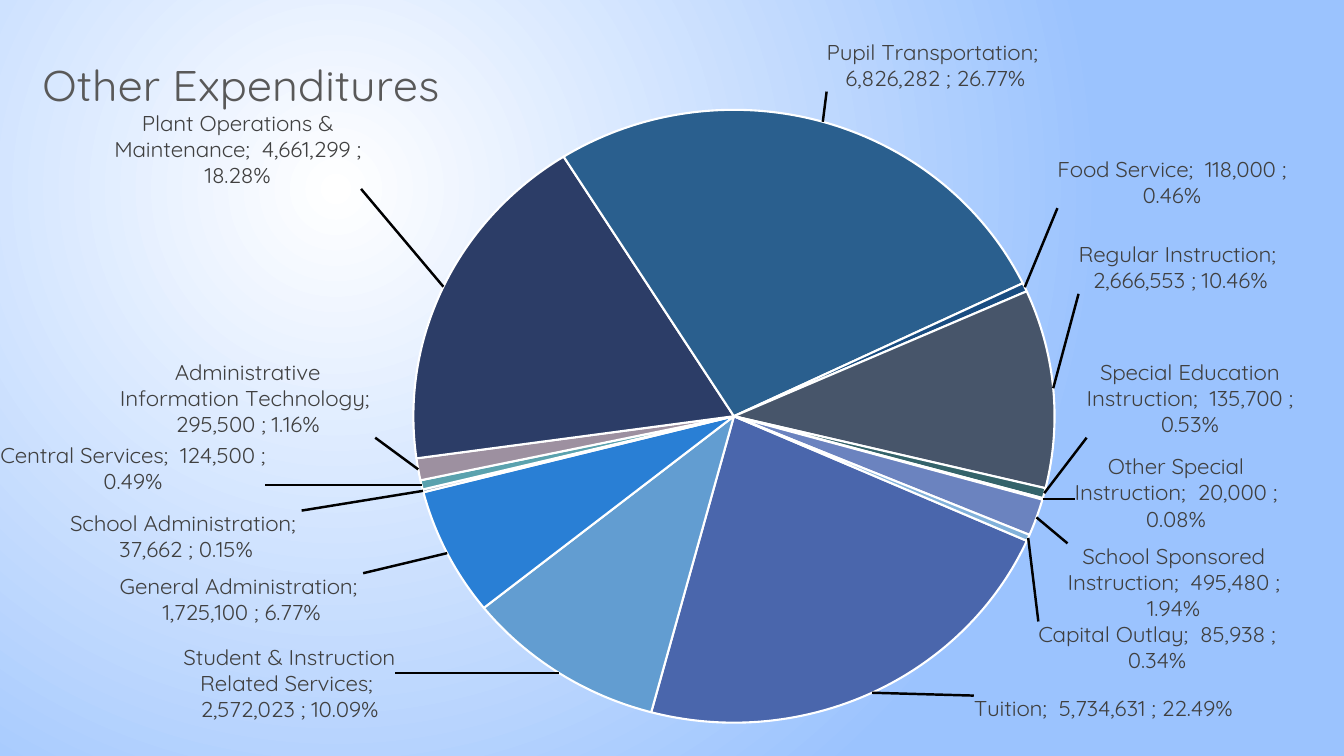
from math import cos, radians, sin

from lxml import etree
from pptx import Presentation
from pptx import util as u
from pptx.chart import data as cd
from pptx.dml import color as dc
from pptx.enum import chart as ce
from pptx.oxml import ns, parse_xml


class Theme:
    text = "404040"
    title = "595959"
    line = "000000"
    edge = "FFFFFF"
    glow = ("FFFFFF", "9BC3FE")
    font = "Quicksand"
    big, small = 32, 16


WIDE, HIGH = 13.33, 7.5
MID_X, MID_Y, RAD = 7.28, 4.32, 3.18  # centre and radius of the pie
START = 114  # clockwise from the top
GAP = 0.06  # between rim and a label's default place
ROW = 0.27  # height of one label row
BROAD = {"Other Special Instruction": 2.72}  # labels with a set width

# category, value, colour, label left, top, width, rows
COSTS = [
    ("Tuition", 5734631, "4A66AC", 9.66, 7.22, 2.56, 1),
    ("Student & Instruction Related Services", 2572023, "629DD1",
     1.82, 6.72, 2.1, 3),
    ("General Administration", 1725100, "297FD5", 1.14, 5.95, 2.46, 2),
    ("School Administration", 37662, "7F8FA9", 0.65, 5.3, 2.34, 2),
    ("Central Services", 124500, "5AA2AE", 0, 4.59, 2.63, 2),
    ("Administrative Information Technology", 295500, "9D90A0",
     1.14, 3.73, 2.58, 3),
    ("Plant Operations & Maintenance", 4661299, "2C3D67",
     1.14, 1.15, 2.44, 3),
    ("Pupil Transportation", 6826282, "2A5F8E", 8.2, 0.41, 2.1, 2),
    ("Food Service", 118000, "194C80", 10.49, 1.62, 2.27, 2),
    ("Regular Instruction", 2666553, "47556A", 10.7, 2.51, 1.96, 2),
    ("Special Education Instruction", 135700, "34636A",
     10.78, 3.73, 2.05, 3),
    ("Other Special Instruction", 20000, "605462", 10.66, 4.71, 2.72, 2),
    ("School Sponsored Instruction", 495480, "6B83BF",
     10.59, 5.64, 2.11, 3),
    ("Capital Outlay", 85938, "81B1DA", 10.3, 6.45, 2.36, 2),
]


def rgb(code):
    return dc.RGBColor.from_string(code)


def style(item, form):
    for key, val in form.items():
        setattr(item, key, val)


def paint(slide):
    """Round glow behind the slide."""
    fill = slide.background.fill
    fill.gradient()
    for stop, code, pos in zip(fill.gradient_stops, Theme.glow, (0, 1)):
        style(stop, {"position": pos})
        stop.color.rgb = rgb(code)
    grad = next(slide.element.iter(ns.qn("a:gradFill")))
    for old in grad.findall(ns.qn("a:lin")):
        grad.remove(old)
    ring = etree.SubElement(grad, ns.qn("a:path"), {"path": "circle"})
    sides = dict(l="50000", t="50000", r="100000", b="100000")
    etree.SubElement(ring, ns.qn("a:fillToRect"), sides)


def place(home, spot, **vals):
    """Give a chart part a manual layout as child number spot."""
    for old in home.findall(ns.qn("c:layout")):
        home.remove(old)
    node = etree.Element(ns.qn("c:layout"))
    man = etree.SubElement(node, ns.qn("c:manualLayout"))
    for key, val in vals.items():
        text = val if isinstance(val, str) else f"{val:.4f}"
        etree.SubElement(man, ns.qn(f"c:{key}"), {"val": text})
    home.insert(spot, node)


def widen(item, wide, rows):
    """Fix the size of a label, so that it wraps later."""
    item.append(parse_xml(f"""<c:extLst {ns.nsdecls("c")}>
      <c:ext uri="{{CE6537A1-D6FC-4f65-9D91-7224C49458BB}}"
      xmlns:c15="http://schemas.microsoft.com/office/drawing/2012/chart">
      <c15:layout><c:manualLayout><c:w val="{wide / WIDE:.4f}"/>
      <c:h val="{rows * ROW / HIGH:.4f}"/></c:manualLayout></c15:layout>
      </c:ext></c:extLst>"""))


def shift(cost, turn):
    """Offset of a label from its default place on the rim."""
    left, top, wide, rows = cost[3:]
    high = rows * ROW
    ang = radians(turn)
    x = MID_X + (RAD + GAP) * cos(ang)
    y = MID_Y - (RAD + GAP) * sin(ang)
    # Near an axis the label is centred, elsewhere a corner touches
    if abs(cos(ang)) < sin(radians(5)):
        x -= wide / 2
    elif cos(ang) < 0:
        x -= wide
    if abs(sin(ang)) < sin(radians(5)):
        y -= high / 2
    elif sin(ang) > 0:
        y -= high
    return {"x": (left - x) / WIDE, "y": (top - y) / HIGH}


def label(ser):
    """Outside labels with leader lines."""
    rule = f"""<c:numFmt formatCode="0.00%" sourceLinked="0"/>
      <c:spPr><a:noFill/><a:ln><a:noFill/></a:ln></c:spPr>
      <c:txPr><a:bodyPr/><a:p><a:pPr><a:defRPr sz="{Theme.small}00" b="0">
      <a:solidFill><a:srgbClr val="{Theme.text}"/></a:solidFill>
      <a:latin typeface="{Theme.font}"/></a:defRPr></a:pPr>
      <a:endParaRPr lang="en-US"/></a:p></c:txPr>
      <c:dLblPos val="outEnd"/><c:showLegendKey val="0"/>
      <c:showVal val="1"/><c:showCatName val="1"/><c:showSerName val="0"/>
      <c:showPercent val="1"/><c:showBubbleSize val="0"/>
      <c:separator>; </c:separator>"""
    each = "".join(f'<c:dLbl><c:idx val="{i}"/>{rule}</c:dLbl>'
                   for i in range(len(COSTS)))
    node = parse_xml(f"""<c:dLbls {ns.nsdecls("c", "a")}>{each}{rule}
      <c:showLeaderLines val="1"/><c:leaderLines><c:spPr><a:ln w="22225">
      <a:solidFill><a:srgbClr val="{Theme.line}"/></a:solidFill></a:ln>
      </c:spPr></c:leaderLines></c:dLbls>""")
    total = sum(cost[1] for cost in COSTS)
    turn = 90 - START
    for cost, item in zip(COSTS, node.findall(ns.qn("c:dLbl"))):
        step = 360 * cost[1] / total
        place(item, 1, **shift(cost, turn - step / 2))
        if cost[0] in BROAD:
            widen(item, BROAD[cost[0]], cost[-1])
        turn -= step
    ser.find(ns.qn("c:cat")).addprevious(node)


def head(chart, text):
    """Chart title at the top left."""
    chart.has_title = True
    para = chart.chart_title.text_frame.paragraphs[0]
    run = para.add_run()
    run.text = text
    style(run.font, {"name": Theme.font, "size": u.Pt(Theme.big),
                     "bold": False})
    run.font.color.rgb = rgb(Theme.title)
    place(chart.chart_title._element, 1, xMode="edge", yMode="edge",
          x=0.34 / WIDE, y=0.47 / HIGH)


def pie(slide):
    data = cd.CategoryChartData(number_format="_(#,##0_)")
    data.categories = [cost[0] for cost in COSTS]
    data.add_series("Series 1", [cost[1] for cost in COSTS])
    frame = slide.shapes.add_chart(
        ce.XL_CHART_TYPE.PIE, 0, 0, u.Inches(WIDE), u.Inches(HIGH), data)
    chart = frame.chart
    style(chart, {"has_legend": False})
    style(chart.font, {"name": Theme.font, "size": u.Pt(Theme.small)})
    chart.font.color.rgb = rgb(Theme.text)
    head(chart, "Other Expenditures")

    # Slices
    plot = chart.plots[0]
    plot.vary_by_categories = True
    ser = plot.series[0]
    for i, cost in enumerate(COSTS):
        form = ser.points[i].format
        form.fill.solid()
        form.fill.fore_color.rgb = rgb(cost[2])
        form.line.color.rgb = rgb(Theme.edge)
        form.line.width = u.Pt(1.5)
    label(ser._element)

    # Turn and place of the pie
    root = plot._element
    for old in root.findall(ns.qn("c:firstSliceAng")):
        root.remove(old)
    etree.SubElement(root, ns.qn("c:firstSliceAng"), {"val": str(START)})
    place(root.getparent(), 0, layoutTarget="inner",
          xMode="edge", yMode="edge",
          x=(MID_X - RAD) / WIDE, y=(MID_Y - RAD) / HIGH,
          w=2 * RAD / WIDE, h=2 * RAD / HIGH)


def main():
    deck = Presentation()
    style(deck, {"slide_width": u.Inches(WIDE),
                 "slide_height": u.Inches(HIGH)})
    slide = deck.slides.add_slide(deck.slide_layouts[6])
    paint(slide)
    pie(slide)
    deck.save("out.pptx")


if __name__ == "__main__":
    main()
